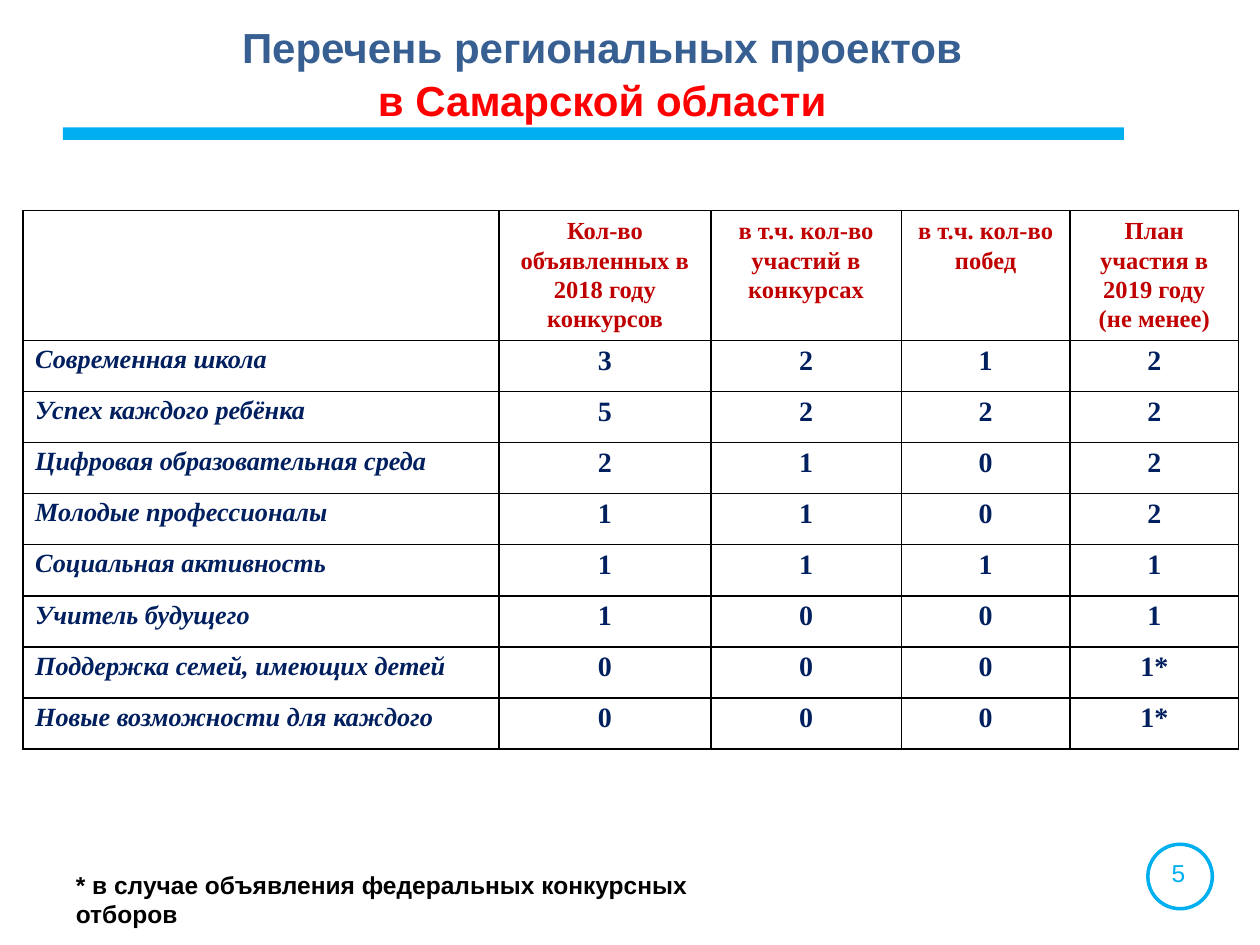
import pptx
import pptx.dml.color
import pptx.enum.shapes
import pptx.enum.text
import pptx.oxml.ns
import pptx.util
from lxml import etree

Cm = pptx.util.Cm
Pt = pptx.util.Pt
RGBColor = pptx.dml.color.RGBColor
Shape = pptx.enum.shapes.MSO_SHAPE
Align = pptx.enum.text.PP_ALIGN
qn = pptx.oxml.ns.qn

SKY = RGBColor(0x00, 0xAF, 0xEF)
BLUE = RGBColor(0x37, 0x5F, 0x92)
RED = RGBColor(0xFF, 0x00, 0x00)
CRIMSON = RGBColor(0xC0, 0x00, 0x00)
NAVY = RGBColor(0x00, 0x1F, 0x5F)
BLACK = RGBColor(0x00, 0x00, 0x00)

# One header line per table row; the first column is merged over all of them
HEADER = [
    ["", "Кол-во", "в т.ч. кол-во", "в т.ч. кол-во", "План"],
    ["", "объявленных в", "участий в", "побед", "участия в"],
    ["", "2018 году", "конкурсах", "", "2019 году"],
    ["", "конкурсов", "", "", "(не менее)"],
]
HEADER_SPACING = [16.6, 15.8, 15.8, 15.9]
PROJECTS = [
    ["Современная школа", "3", "2", "1", "2"],
    ["Успех каждого ребёнка", "5", "2", "2", "2"],
    ["Цифровая образовательная среда", "2", "1", "0", "2"],
    ["Молодые профессионалы", "1", "1", "0", "2"],
    ["Социальная активность", "1", "1", "1", "1"],
    ["Учитель будущего", "1", "0", "0", "1"],
    ["Поддержка семей, имеющих детей", "0", "0", "0", "1*"],
    ["Новые возможности для каждого", "0", "0", "0", "1*"],
]
COLUMN_WIDTHS = [9.6, 4.27, 3.84, 3.4, 3.4]
ROW_HEIGHTS = [0.74, 0.58, 0.58, 0.72] + [1.03] * len(PROJECTS)


class SlideBuilder:
    """Holds the fonts and the current slide."""

    heading_font = "Arial"
    table_font = "Times New Roman"

    def __init__(self, slide):
        self.slide = slide

    def style(self, run, font_name, size, color, bold=True, italic=False):
        run.font.name = font_name
        run.font.size = Pt(size)
        run.font.bold = bold
        run.font.italic = italic
        run.font.color.rgb = color

    def shape(self, kind, left, top, width, height, fill=None, line=None):
        shape = self.slide.shapes.add_shape(
            kind, Cm(left), Cm(top), Cm(width), Cm(height))
        shape.shadow.inherit = False
        if fill is None:
            shape.fill.background()
        else:
            shape.fill.solid()
            shape.fill.fore_color.rgb = fill
        if line is None:
            shape.line.fill.background()
        else:
            shape.line.color.rgb = line
            shape.line.width = Pt(2)

    def text(self, left, top, width, height, parts, size, bold=True):
        """Adds one paragraph made of (text, colour) parts."""
        box = self.slide.shapes.add_textbox(
            Cm(left), Cm(top), Cm(width), Cm(height))
        frame = box.text_frame
        frame.word_wrap = True
        frame.margin_left = frame.margin_right = frame.margin_bottom = 0
        frame.margin_top = Cm(0.03)
        paragraph = frame.paragraphs[0]
        for words, color in parts:
            run = paragraph.add_run()
            run.text = words
            self.style(run, self.heading_font, size, color, bold)
        return paragraph

    def indent(self, paragraph, left, first=0):
        properties = paragraph._p.get_or_add_pPr()
        properties.set("marL", str(Cm(left)))
        properties.set("indent", str(Cm(first)))

    def borders(self, cell, sides):
        properties = cell._tc.get_or_add_tcPr()
        for position, side in enumerate("LRTB"):
            line = etree.Element(qn(f"a:ln{side}"), w=str(Pt(1)))
            if side in sides:
                fill = etree.SubElement(line, qn("a:solidFill"))
                etree.SubElement(fill, qn("a:srgbClr"), val=str(BLACK))
            else:
                etree.SubElement(line, qn("a:noFill"))
            properties.insert(position, line)

    def cell(self, cell, words, size, color, align, top=0.0, italic=False):
        cell.fill.background()
        cell.margin_left = cell.margin_right = cell.margin_bottom = 0
        cell.margin_top = Cm(top)
        paragraph = cell.text_frame.paragraphs[0]
        paragraph.text = words
        paragraph.alignment = align
        for run in paragraph.runs:
            self.style(run, self.table_font, size, color, italic=italic)
        if not words:
            # Keeps an empty cell from stretching its row
            etree.SubElement(paragraph._p, qn("a:endParaRPr"), sz="1000")
        return paragraph

    def projects_table(self, left, top):
        rows = HEADER + PROJECTS
        table = self.slide.shapes.add_table(
            len(rows), len(COLUMN_WIDTHS), Cm(left), Cm(top),
            Cm(sum(COLUMN_WIDTHS)), Cm(sum(ROW_HEIGHTS))).table
        table.first_row = table.horz_banding = False
        for column, width in zip(table.columns, COLUMN_WIDTHS):
            column.width = Cm(width)
        for row, height in zip(table.rows, ROW_HEIGHTS):
            row.height = Cm(height)

        header_end = len(HEADER)
        for r, row in enumerate(rows):
            is_header = r < header_end
            sides = "LR"
            if r == 0 or not is_header:
                sides += "T"
            if r >= header_end - 1:
                sides += "B"
            for c, words in enumerate(row):
                cell = table.cell(r, c)
                if is_header:
                    paragraph = self.cell(cell, words, 14, CRIMSON, Align.CENTER,
                                          top=0 if r else 0.1)
                    paragraph.line_spacing = Pt(HEADER_SPACING[r])
                elif c == 0:
                    paragraph = self.cell(cell, words, 15, NAVY, Align.LEFT,
                                          top=0.1, italic=True)
                    self.indent(paragraph, 0.25)
                else:
                    self.cell(cell, words, 16, NAVY, Align.CENTER, top=0.1)
                self.borders(cell, sides)
        table.cell(0, 0).merge(table.cell(header_end - 1, 0))


def main():
    presentation = pptx.Presentation()
    presentation.slide_width = Cm(25.4)
    presentation.slide_height = Cm(19.05)
    builder = SlideBuilder(
        presentation.slides.add_slide(presentation.slide_layouts[6]))

    # Title rule and page number ring
    builder.shape(Shape.RECTANGLE, 1.27, 2.57, 21.39, 0.25, fill=SKY)
    builder.shape(Shape.OVAL, 23.14, 17.02, 1.3, 1.3, line=SKY)
    builder.text(23.62, 17.27, 0.4, 0.66, [("5", SKY)], 14, bold=False)

    # Title: the second line is set in by a hanging indent
    title = builder.text(
        4.85, 0.36, 14.58, 2.11,
        [("Перечень региональных проектов ", BLUE),
         ("в Самарской области", RED)], 24)
    title.line_spacing = 1.05
    builder.indent(title, 2.77, -2.74)

    # Regional projects
    builder.projects_table(0.46, 4.24)

    # Footnote
    footnote = builder.text(
        1.5, 17.5, 14.53, 0.66,
        [("* в случае объявления федеральных конкурсных отборов", BLACK)], 14)
    builder.indent(footnote, 0.03)

    presentation.save("out.pptx")


if __name__ == "__main__":
    main()
